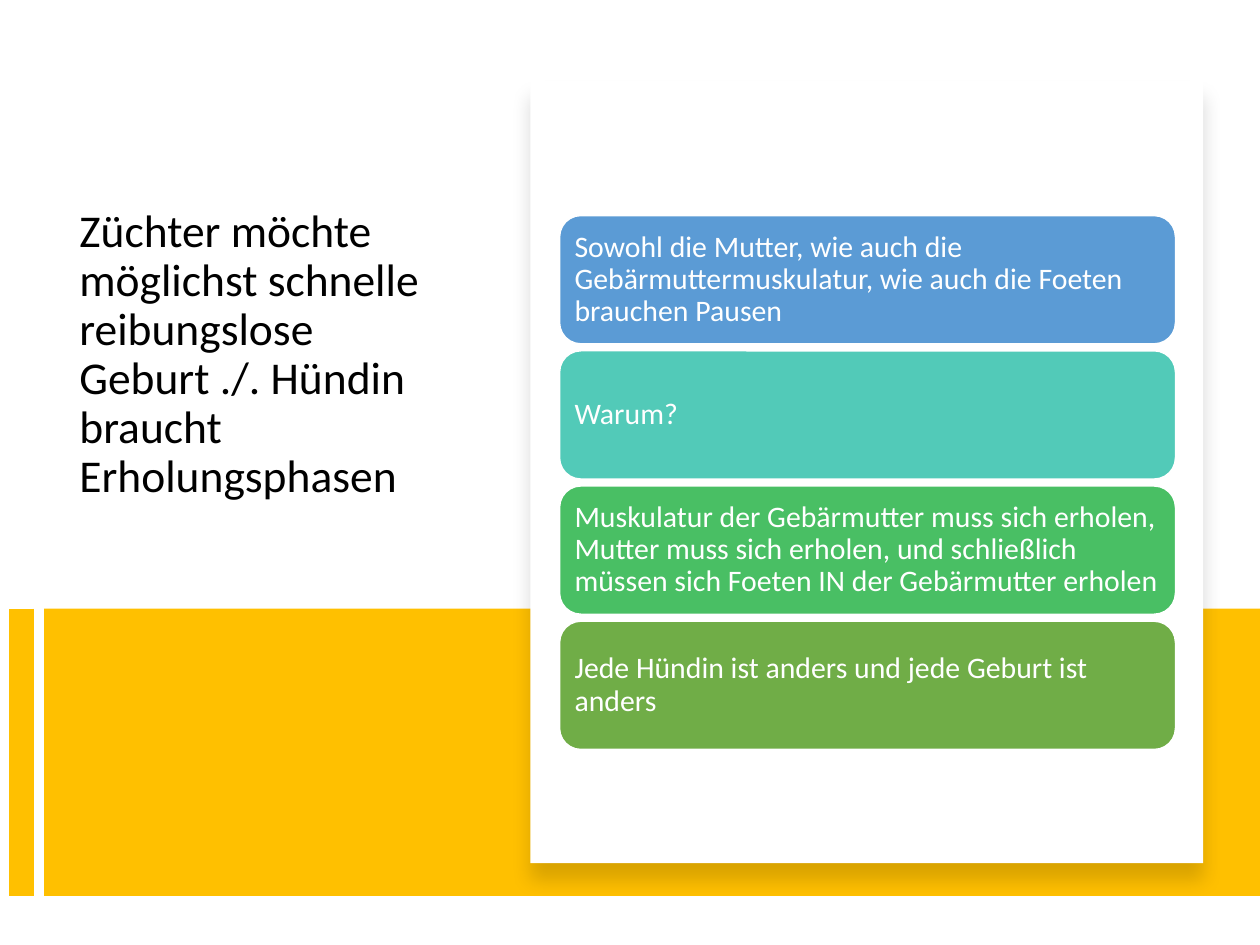
from lxml import etree
from pptx import Presentation
from pptx.dml.color import RGBColor
from pptx.enum.shapes import MSO_CONNECTOR as Connector, MSO_SHAPE as Shape
from pptx.enum.text import MSO_ANCHOR as Anchor, PP_ALIGN as Align
from pptx.oxml import parse_xml
from pptx.oxml.ns import nsdecls, qn
from pptx.util import Inches, Pt

# Content
TITLE = ("Züchter möchte möglichst schnelle reibungslose Geburt ./. "
         "Hündin braucht Erholungsphasen")
CARDS = [
    ("5B9BD5", "Sowohl die Mutter, wie auch die Gebärmuttermuskulatur, "
               "wie auch die Foeten brauchen Pausen"),
    ("52CAB8", "Warum?"),
    ("49BF64", "Muskulatur der Gebärmutter muss sich erholen, Mutter muss sich "
               "erholen, und schließlich müssen sich Foeten IN der Gebärmutter erholen"),
    ("70AD47", "Jede Hündin ist anders und jede Geburt ist anders"),
]
FONT = "Calibri"
WHITE, BLACK, YELLOW = "FFFFFF", "000000", "FFC000"

# Layout in inches
BAND_TOP, BAND_HEIGHT = 4.83, 2.28
STRIPE_X = 0.17
CARD_LEFT, CARD_TOP, CARD_WIDTH, CARD_HEIGHT = 4.44, 1.71, 4.89, 1.02
CARD_STEP = 1.073


def color(hex_text):
    return RGBColor.from_string(hex_text)


def add_box(page, kind, left, top, width, height, fill, line=None):
    box = page.shapes.add_shape(kind, Inches(left), Inches(top),
                                Inches(width), Inches(height))
    box.shadow.inherit = False
    box.fill.solid()
    box.fill.fore_color.rgb = color(fill)
    if line:
        box.line.color.rgb = color(line)
        box.line.width = Pt(1)
    else:
        box.line.fill.background()
    return box


def write(box, text, size, ink, anchor, inset_x, inset_y):
    frame = box.text_frame
    frame.word_wrap = True
    frame.vertical_anchor = anchor
    frame.margin_left = frame.margin_right = Inches(inset_x)
    frame.margin_top = frame.margin_bottom = Inches(inset_y)
    para = frame.paragraphs[0]
    para.alignment = Align.LEFT
    para.line_spacing = 0.9
    span = para.add_run()
    span.text = text
    span.font.name = FONT
    span.font.size = Pt(size)
    span.font.color.rgb = color(ink)


def add_soft_shadow(box):
    effects = box._element.spPr.find(qn("a:effectLst"))
    effects.append(parse_xml(
        f'<a:outerShdw {nsdecls("a")} blurRad="{Pt(11)}" dist="{Pt(10)}" '
        f'dir="5400000" algn="t" rotWithShape="0"><a:srgbClr val="{BLACK}">'
        '<a:alpha val="15000"/></a:srgbClr></a:outerShdw>'))


deck = Presentation()
deck.slide_width, deck.slide_height = Inches(10), Inches(7.5)
page = deck.slides.add_slide(deck.slide_layouts[5])

# Title
title = page.shapes.title
title.left, title.top = Inches(0.53), Inches(1.6)
title.width, title.height = Inches(3.11), Inches(2.94)
write(title, TITLE, 26, BLACK, Anchor.TOP, 0.1, 0.05)

# Yellow band and stripe
add_box(page, Shape.RECTANGLE, 0.35, BAND_TOP, 9.65, BAND_HEIGHT, YELLOW)
stripe = page.shapes.add_connector(
    Connector.STRAIGHT, Inches(STRIPE_X), Inches(BAND_TOP),
    Inches(STRIPE_X), Inches(BAND_TOP + BAND_HEIGHT))
stripe.line.color.rgb = color(YELLOW)
stripe.line.width = Pt(14)
etree.SubElement(stripe._element.spPr, qn("a:effectLst"))

# White panel
panel = add_box(page, Shape.RECTANGLE, 4.21, 0.64, 5.34, 6.21, WHITE)
add_soft_shadow(panel)

# Stacked cards
for index, (fill, text) in enumerate(CARDS):
    card = add_box(page, Shape.ROUNDED_RECTANGLE, CARD_LEFT,
                   CARD_TOP + index * CARD_STEP, CARD_WIDTH, CARD_HEIGHT,
                   fill, line=WHITE)
    write(card, text, 17, WHITE, Anchor.MIDDLE, 0.07, 0.07)

deck.save("out.pptx")
